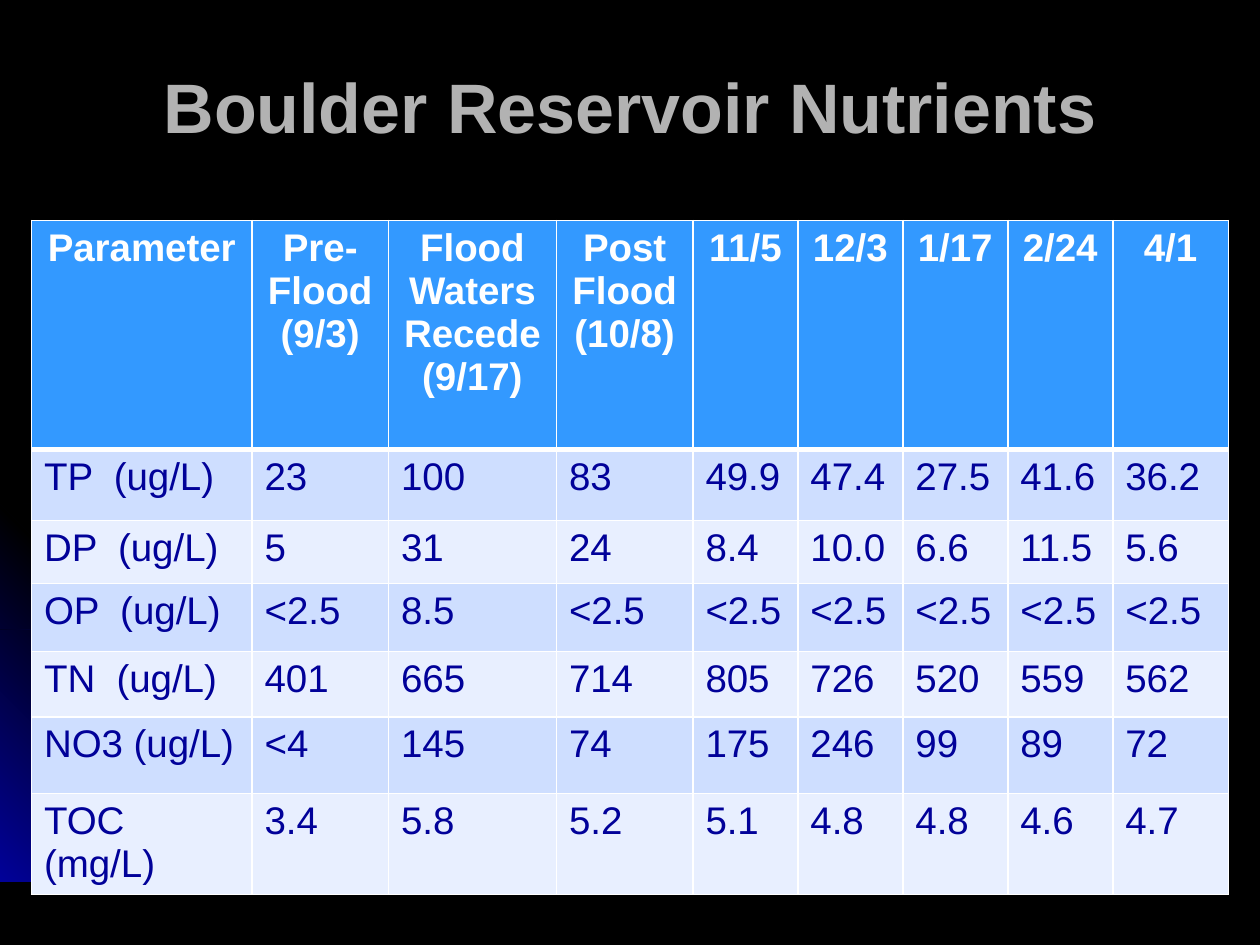
from copy import deepcopy

from lxml import etree
from pptx import Presentation
from pptx.dml.color import RGBColor
from pptx.enum.shapes import MSO_SHAPE
from pptx.enum.text import MSO_ANCHOR, PP_ALIGN
from pptx.oxml.ns import qn
from pptx.util import Inches, Pt

OVAL = MSO_SHAPE.OVAL
CENTER, LEFT = PP_ALIGN.CENTER, PP_ALIGN.LEFT
MIDDLE = MSO_ANCHOR.MIDDLE

THEME = {
    "font": "Arial", "title_size": Pt(40), "table_size": Pt(22),
    "black": "000000", "navy": "010199", "gray": "B2B2B2", "white": "FFFFFF",
    "header": "3399FF", "bands": ("CEDEFF", "E8EFFF"),
    "thin": Pt(1), "thick": Pt(3),
}
RISING, FALLING = 45, 315  # gradient directions


def paint_gradient(shape, colors, angle):
    """Fill with evenly spaced colours, without line or shadow."""
    shape.shadow.inherit = False
    shape.line.fill.background()
    shape.fill.gradient()
    shape.fill.gradient_angle = angle
    stops = shape.fill.gradient_stops
    if len(colors) == 3:
        first = shape._element.spPr.find(".//" + qn("a:gs"))
        first.addnext(deepcopy(first))
        stops = shape.fill.gradient_stops
    for index, (stop, color) in enumerate(zip(stops, colors)):
        stop.position = index / (len(colors) - 1)
        stop.color.rgb = RGBColor.from_string(THEME[color])


def write_paragraph(paragraph, text, alignment, **format_values):
    paragraph.text = text
    paragraph.alignment = alignment
    color = format_values.pop("color")
    for name, value in format_values.items():
        setattr(paragraph.font, name, value)
    paragraph.font.name = THEME["font"]
    paragraph.font.color.rgb = RGBColor.from_string(color)


presentation = Presentation()
presentation.slide_width, presentation.slide_height = Inches(10), Inches(7.5)
width, height = presentation.slide_width, presentation.slide_height
slide = presentation.slides.add_slide(presentation.slide_layouts[5])
slide.background.fill.solid()
slide.background.fill.fore_color.rgb = RGBColor.from_string(THEME["black"])

# Corner decoration: upper edges of the thin arcs, plus the glowing triangle
BOTTOM = 7.49
STROKE_X, STROKE_Y = 0.02, 0.02
outer_arc = [(0, 4.35), (0.28, 4.41), (0.57, 4.47), (0.98, 4.59), (1.36, 4.77),
             (1.74, 4.97), (2.09, 5.21), (2.42, 5.48), (2.72, 5.78), (3, 6.11),
             (3.25, 6.48), (3.39, 6.73), (3.52, 6.98), (3.62, 7.23), (3.72, BOTTOM)]
inner_arc = [(0, 4.75), (0.41, 4.88), (0.79, 5.05), (1.17, 5.26), (1.52, 5.49),
             (1.84, 5.76), (2.15, 6.06), (2.42, 6.4), (2.66, 6.76), (2.86, 7.12),
             (2.96, 7.3), (3.03, BOTTOM)]
middle_arc = [(0, 4.42), (0.39, 4.55), (0.76, 4.73), (1.11, 4.93), (1.44, 5.16),
              (1.75, 5.43), (2.04, 5.73), (2.29, 6.03), (2.54, 6.39), (2.69, 6.65),
              (2.82, 6.93), (2.94, 7.2), (3.03, BOTTOM)]
outlines = []
for arc in (outer_arc, inner_arc, middle_arc):
    lower_edge = [(max(x - STROKE_X, 0), min(y + STROKE_Y, BOTTOM))
                  for x, y in reversed(arc)]
    outlines.append((arc + lower_edge, ("black", "navy", "black"), FALLING))
triangle = [(0, 4.27), (3.22, BOTTOM), (0, BOTTOM)]
outlines.insert(1, (triangle, ("navy", "black", "navy"), RISING))
for points, colors, angle in outlines:
    builder = slide.shapes.build_freeform(*points[0], scale=Inches(1))
    builder.add_line_segments(points[1:], close=True)
    paint_gradient(builder.convert_to_shape(), colors, angle)

# Small orbs on the arcs
for left, top, size, angle in [(0.36, 4.83, 0.15, RISING),
                               (2.67, 6.74, 0.16, FALLING),
                               (1.37, 4.73, 0.21, RISING)]:
    orb = slide.shapes.add_shape(OVAL, Inches(left), Inches(top),
                                 Inches(size), Inches(size))
    paint_gradient(orb, ("navy", "black"), angle)

# Title, in front of the decoration
title = slide.shapes.title
slide.shapes._spTree.append(title._element)
title.left, title.top = int(width * 0.05), int(height / 30)
title.width, title.height = int(width * 0.9), Inches(1.17)
title.text_frame.vertical_anchor = MIDDLE
write_paragraph(title.text_frame.paragraphs[0], "Boulder Reservoir Nutrients", CENTER,
                size=THEME["title_size"], bold=True, color=THEME["gray"])

# Nutrient table: columns in twelfths of an inch, rows in inches
column_units = [21, 13, 16, 13, 10, 10, 10, 10, 11]
row_heights = [1.82, 0.56, 0.5, 0.54, 0.52, 0.61, 0.8]
rows = [
    ["Parameter", "Pre-Flood\n(9/3)", "Flood Waters Recede\n(9/17)",
     "Post Flood\n(10/8)", "11/5", "12/3", "1/17", "2/24", "4/1"],
    ["TP  (ug/L)", "23", "100", "83", "49.9", "47.4", "27.5", "41.6", "36.2"],
    ["DP  (ug/L)", "5", "31", "24", "8.4", "10.0", "6.6", "11.5", "5.6"],
    ["OP  (ug/L)", "<2.5", "8.5"] + ["<2.5"] * 6,
    ["TN  (ug/L)", "401", "665", "714", "805", "726", "520", "559", "562"],
    ["NO3 (ug/L)", "<4", "145", "74", "175", "246", "99", "89", "72"],
    ["TOC (mg/L)", "3.4", "5.8", "5.2", "5.1", "4.8", "4.8", "4.6", "4.7"],
]
table = slide.shapes.add_table(len(rows), len(column_units), int(width * 0.025),
                               Inches(1.75), int(width * 0.95),
                               Inches(sum(row_heights))).table
table.horz_banding = False
for column, units in zip(table.columns, column_units):
    column.width = Inches(units / 12)
for row, row_height in zip(table.rows, row_heights):
    row.height = Inches(row_height)

for row_index, values in enumerate(rows):
    is_header = row_index == 0
    fill_color = THEME["header"] if is_header else THEME["bands"][(row_index - 1) % 2]
    text_color = THEME["white"] if is_header else THEME["navy"]
    borders = dict.fromkeys(("a:lnL", "a:lnR", "a:lnT", "a:lnB"), THEME["thin"])
    if is_header:
        borders["a:lnB"] = THEME["thick"]
    elif row_index == 1:
        borders["a:lnT"] = THEME["thick"]
    for column_index, value in enumerate(values):
        cell = table.cell(row_index, column_index)
        properties = cell._tc.get_or_add_tcPr()
        for tag, line_width in borders.items():
            line = etree.SubElement(properties, qn(tag), w=str(line_width))
            line_fill = etree.SubElement(line, qn("a:solidFill"))
            etree.SubElement(line_fill, qn("a:srgbClr"), val=THEME["white"])
        cell.fill.solid()
        cell.fill.fore_color.rgb = RGBColor.from_string(fill_color)
        cell.text = value
        for paragraph, text in zip(cell.text_frame.paragraphs, value.split("\n")):
            write_paragraph(paragraph, text, CENTER if is_header else LEFT,
                            size=THEME["table_size"], bold=is_header, color=text_color)

presentation.save("out.pptx")
